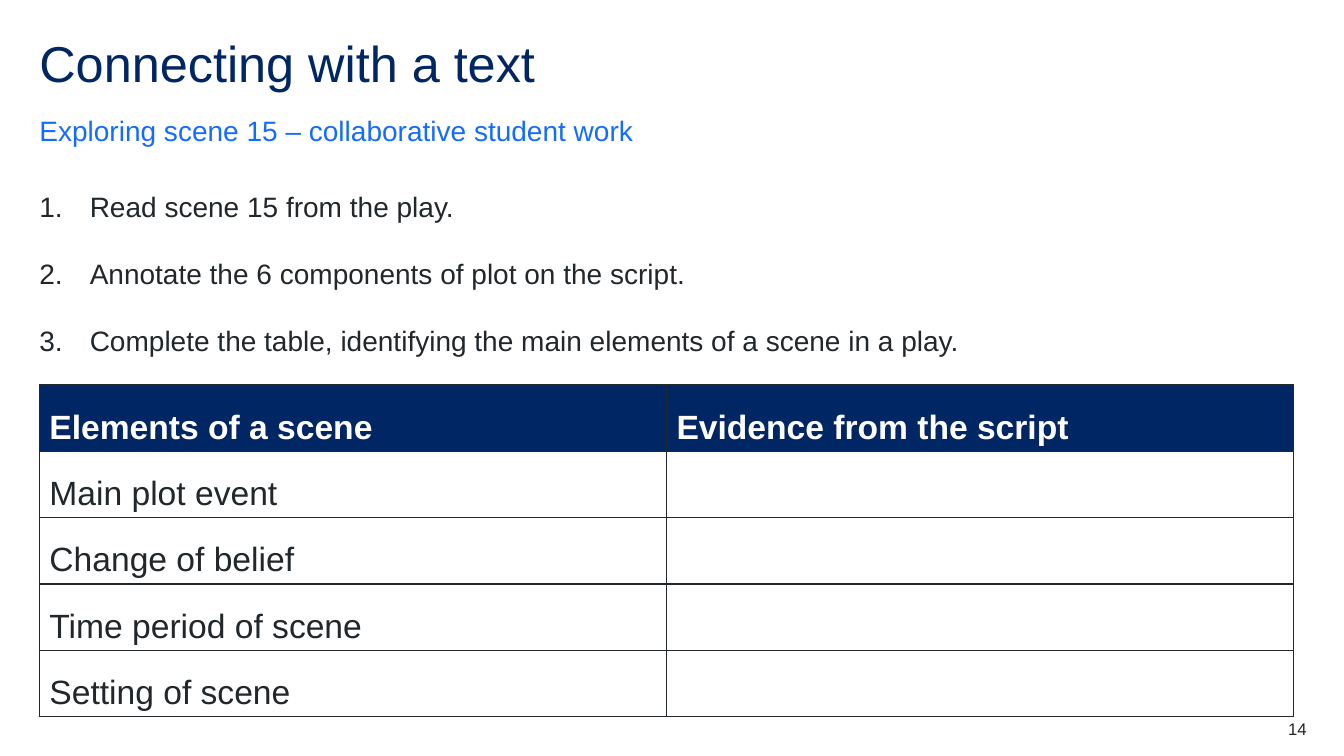
import pptx
import pptx.dml.color
import pptx.enum.text
import pptx.oxml.ns
import pptx.util
from lxml import etree

Inches = pptx.util.Inches
Pt = pptx.util.Pt
ANCHOR = pptx.enum.text.MSO_ANCHOR
ALIGN = pptx.enum.text.PP_ALIGN

COLORS = {"navy": "002664", "blue": "146CFD", "ink": "22272B", "white": "FFFFFF"}
FONT = "Arial"
LEFT, WIDTH = 0.39, 12.56
STEPS = [
    "Read scene 15 from the play.",
    "Annotate the 6 components of plot on the script.",
    "Complete the table, identifying the main elements of a scene in a play.",
]
SCENE_ROWS = [
    ("Elements of a scene", "Evidence from the script"),
    ("Main plot event", ""),
    ("Change of belief", ""),
    ("Time period of scene", ""),
    ("Setting of scene", ""),
]


def rgb(name):
    return pptx.dml.color.RGBColor.from_string(COLORS[name])


def add_xml(parent, tag, **attributes):
    return etree.SubElement(parent, pptx.oxml.ns.qn(tag), **attributes)


def style(paragraph, size, color, spacing=1.5, after=12, bold=False, align=ALIGN.LEFT):
    paragraph.alignment = align
    paragraph.line_spacing = spacing
    paragraph.space_before = Pt(0)
    paragraph.space_after = Pt(after)
    font = paragraph.font
    font.name, font.size, font.bold = FONT, Pt(size), bold
    font.color.rgb = rgb(color)


def place(shape, box, anchor=ANCHOR.TOP):
    """Move a text shape to box and clear its margins; return its text frame."""
    shape.left, shape.top, shape.width, shape.height = map(Inches, box)
    frame = shape.text_frame
    frame.margin_left = frame.margin_right = frame.margin_top = frame.margin_bottom = 0
    frame.word_wrap = True
    frame.auto_size = pptx.enum.text.MSO_AUTO_SIZE.NONE
    frame.vertical_anchor = anchor
    return frame


def fill_title(title, box):
    frame = place(title, box)
    frame.text = "Connecting with a text"
    style(frame.paragraphs[0], 36, "navy", spacing=0.9, after=0)


def fill_subtitle(subtitle, box):
    frame = place(subtitle, box, ANCHOR.BOTTOM)
    frame.text = "Exploring scene 15 – collaborative student work"
    paragraph = frame.paragraphs[0]
    properties = paragraph._p.get_or_add_pPr()
    properties.set("marL", "0")
    properties.set("indent", "0")
    add_xml(properties, "a:buNone")
    style(paragraph, 20, "blue")


def fill_steps(steps, box):
    frame = place(steps, box)
    frame.text = "\n".join(STEPS)
    for paragraph in frame.paragraphs:
        properties = paragraph._p.get_or_add_pPr()
        properties.set("marL", str(Inches(0.5)))
        properties.set("indent", str(-Inches(0.5)))
        add_xml(properties, "a:buFont", typeface="+mj-lt")
        add_xml(properties, "a:buAutoNum", type="arabicPeriod")
        style(paragraph, 20, "ink")


def add_borders(cell):
    properties = cell._tc.get_or_add_tcPr()
    for side in ("a:lnL", "a:lnR", "a:lnT", "a:lnB"):
        line = add_xml(properties, side, w=str(Pt(1)))
        add_xml(add_xml(line, "a:solidFill"), "a:srgbClr", val=COLORS["ink"])


def add_scene_table(slide, box):
    columns = len(SCENE_ROWS[0])
    table = slide.shapes.add_table(len(SCENE_ROWS), columns, *map(Inches, box)).table
    for row, texts in enumerate(SCENE_ROWS):
        header = row == 0
        for column, text in enumerate(texts):
            cell = table.cell(row, column)
            add_borders(cell)
            cell.fill.solid()
            cell.fill.fore_color.rgb = rgb("navy" if header else "white")
            cell.text = text
            style(cell.text_frame.paragraphs[0], 24,
                  "white" if header else "ink", bold=header)


def add_page_number(slide, box):
    frame = place(slide.shapes.add_textbox(*map(Inches, box)), box)
    frame.text = "14"
    style(frame.paragraphs[0], 12, "ink", spacing=1.0, after=0, align=ALIGN.RIGHT)


def build_activity_slide(deck):
    slide = deck.slides.add_slide(deck.slide_layouts.get_by_name("Two Content"))
    title, subtitle, steps = slide.placeholders
    fill_title(title, (LEFT, 0.39, WIDTH, 0.6))
    fill_subtitle(subtitle, (LEFT, 1.07, WIDTH, 0.39))
    fill_steps(steps, (LEFT, 1.71, WIDTH, 2.02))
    add_scene_table(slide, (LEFT, 3.82, 12.44, 2.7))
    add_page_number(slide, (12.17, 7.13, 0.79, 0.2))


def main():
    deck = pptx.Presentation()
    deck.slide_width, deck.slide_height = Inches(13.33), Inches(7.5)
    build_activity_slide(deck)
    deck.save("out.pptx")


if __name__ == "__main__":
    main()
